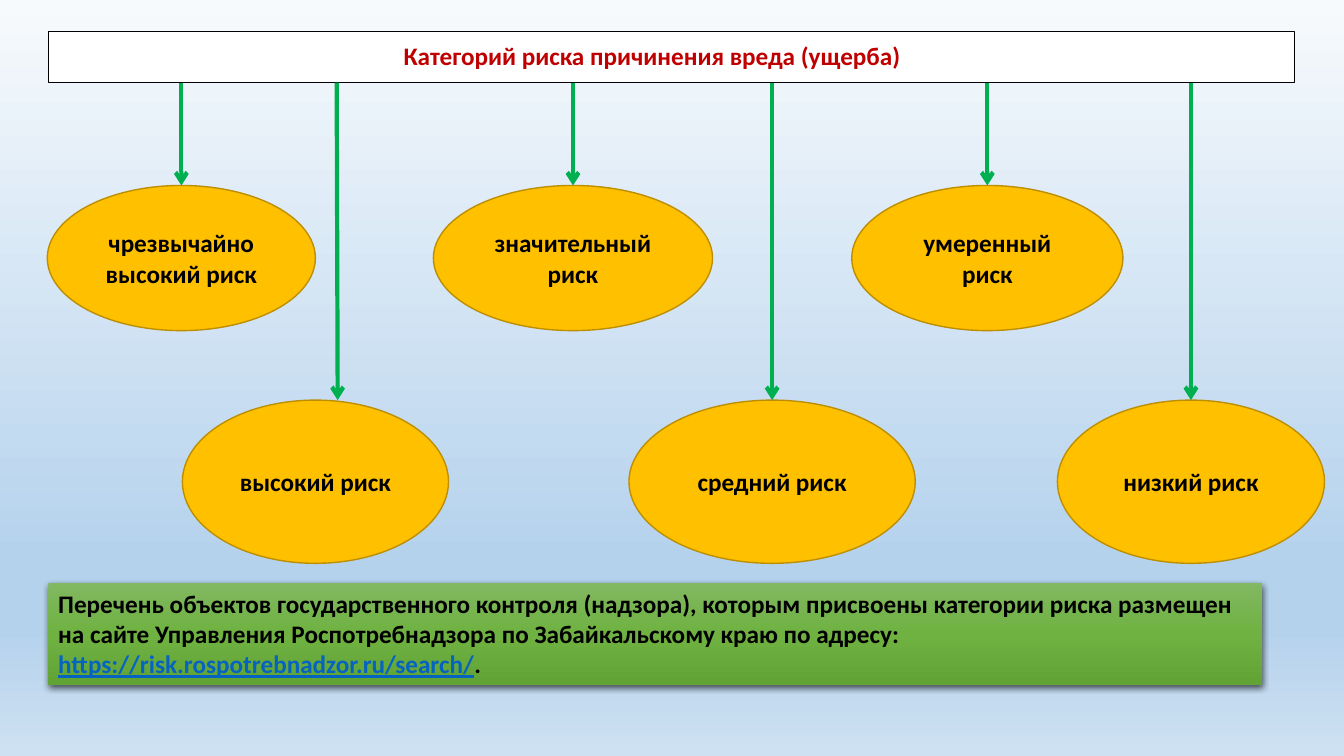
"""Builds a slide that shows the risk categories under one heading."""
from lxml.etree import SubElement
from pptx import Presentation
from pptx.dml.color import RGBColor
from pptx.enum.shapes import MSO_CONNECTOR as Connector, MSO_SHAPE as Preset
from pptx.enum.text import MSO_ANCHOR as Anchor, PP_ALIGN as Align
from pptx.oxml.ns import qn
from pptx.util import Pt


def color(code):
    return RGBColor.from_string(code)


class RiskSlide:
    font = "Calibri"
    size = 18
    ink = "000000"
    oval_fill, oval_line = "FFC000", "BD8E00"
    arrow_color = "00B050"

    def __init__(self, deck):
        self.page = deck.slides.add_slide(deck.slide_layouts[6])

    def gradient(self, owner, fill, stops):
        fill.gradient()
        fill.gradient_angle = 270
        stop_list = owner.element.find(".//" + qn("a:gsLst"))
        stop_list.clear()
        for position, code in stops:
            stop = SubElement(stop_list, qn("a:gs"), pos=str(position * 1000))
            SubElement(stop, qn("a:srgbClr"), val=code)

    def background(self, stops):
        self.gradient(self.page, self.page.background.fill, stops)

    def shape(self, preset, left, top, width, height, fill=None, line=None):
        shape = self.page.shapes.add_shape(preset, Pt(left), Pt(top), Pt(width), Pt(height))
        shape.shadow.inherit = False
        if fill:
            shape.fill.solid()
            shape.fill.fore_color.rgb = color(fill)
        if line:
            shape.line.color.rgb = color(line)
            shape.line.width = Pt(1)
        else:
            shape.line.fill.background()
        return shape

    def panel(self, left, top, width, height, stops):
        panel = self.shape(Preset.RECTANGLE, left, top, width, height)
        self.gradient(panel, panel.fill, stops)
        effects = panel.element.spPr.find(qn("a:effectLst"))
        shadow = SubElement(effects, qn("a:outerShdw"), blurRad=str(Pt(4.5)), dist=str(Pt(1.5)),
                            dir="5400000", algn="ctr", rotWithShape="0")
        shade = SubElement(shadow, qn("a:srgbClr"), val="000000")
        SubElement(shade, qn("a:alpha"), val="63000")

    def add_runs(self, shape, runs, align=Align.CENTER, anchor=Anchor.MIDDLE, spacing=None):
        frame = shape.text_frame
        frame.word_wrap = True
        frame.vertical_anchor = anchor
        para = frame.paragraphs[0]
        para.alignment = align
        para.line_spacing = spacing
        for text, code, underline in runs:
            span = para.add_run()
            span.text = text
            span.font.name = self.font
            span.font.size = Pt(self.size)
            span.font.bold = True
            span.font.underline = underline
            span.font.color.rgb = color(code)

    def text(self, left, top, width, height, runs, **layout):
        box = self.page.shapes.add_textbox(Pt(left), Pt(top), Pt(width), Pt(height))
        self.add_runs(box, runs, **layout)

    def oval(self, label, left, top, width, height):
        oval = self.shape(Preset.OVAL, left, top, width, height, self.oval_fill, self.oval_line)
        self.add_runs(oval, [(label, self.ink, False)])

    def arrow(self, start_x, start_y, end_x, end_y):
        arrow = self.page.shapes.add_connector(
            Connector.STRAIGHT, Pt(start_x), Pt(start_y), Pt(end_x), Pt(end_y))
        arrow.line.color.rgb = color(self.arrow_color)
        arrow.line.width = Pt(3)
        properties = arrow.element.spPr
        SubElement(properties.find(qn("a:ln")), qn("a:tailEnd"), type="arrow")
        SubElement(properties, qn("a:effectLst"))


HEADING_BOTTOM = 59
UPPER, LOWER = (132.5, 103.7), (285.8, 116.6)
RISKS = [
    ("чрезвычайно высокий риск", 33.8, 191.5, UPPER),
    ("высокий риск", 130.3, 190.1, LOWER),
    ("значительный риск", 309.6, 199.4, UPPER),
    ("средний риск", 449.3, 204.5, LOWER),
    ("умеренный риск", 608.4, 193.7, UPPER),
    ("низкий риск", 755.3, 190.8, LOWER),
]
SHIFTED_ARROWS = {"высокий риск": (240.5, 241.2)}
NOTE = [
    ("Перечень объектов государственного контроля (надзора), которым присвоены категории риска "
     "размещен на сайте Управления Роспотребнадзора по Забайкальскому краю по адресу: ",
     "000000", False),
    ("https://risk.rospotrebnadzor.ru/search/", "0563C1", True),
    (".", "000000", False),
]


def main():
    deck = Presentation()
    deck.slide_width, deck.slide_height = Pt(960), Pt(540)
    slide = RiskSlide(deck)
    slide.background([(0, "F7FAFD"), (74, "B5D2EC"), (83, "B5D2EC"), (100, "CEE1F2")])
    slide.panel(34.5, 416.4, 867, 72.7, [(0, "81B861"), (50, "6FB242"), (100, "62A336")])
    slide.shape(Preset.RECTANGLE, 34.5, 22.3, 890, HEADING_BOTTOM - 22.3, "FFFFFF", "000000")
    slide.text(51.8, 16.6, 828, 48.2,
               [("Категорий риска причинения вреда (ущерба)", "C00000", False)], spacing=0.9)
    for label, left, width, (top, height) in RISKS:
        slide.oval(label, left, top, width, height)
        center = left + width / 2
        start_x, end_x = SHIFTED_ARROWS.get(label, (center, center))
        slide.arrow(start_x, HEADING_BOTTOM, end_x, top)
    slide.text(34.5, 416.4, 860.4, 72.7, NOTE, align=Align.LEFT, anchor=Anchor.TOP)
    deck.save("out.pptx")


if __name__ == "__main__":
    main()
